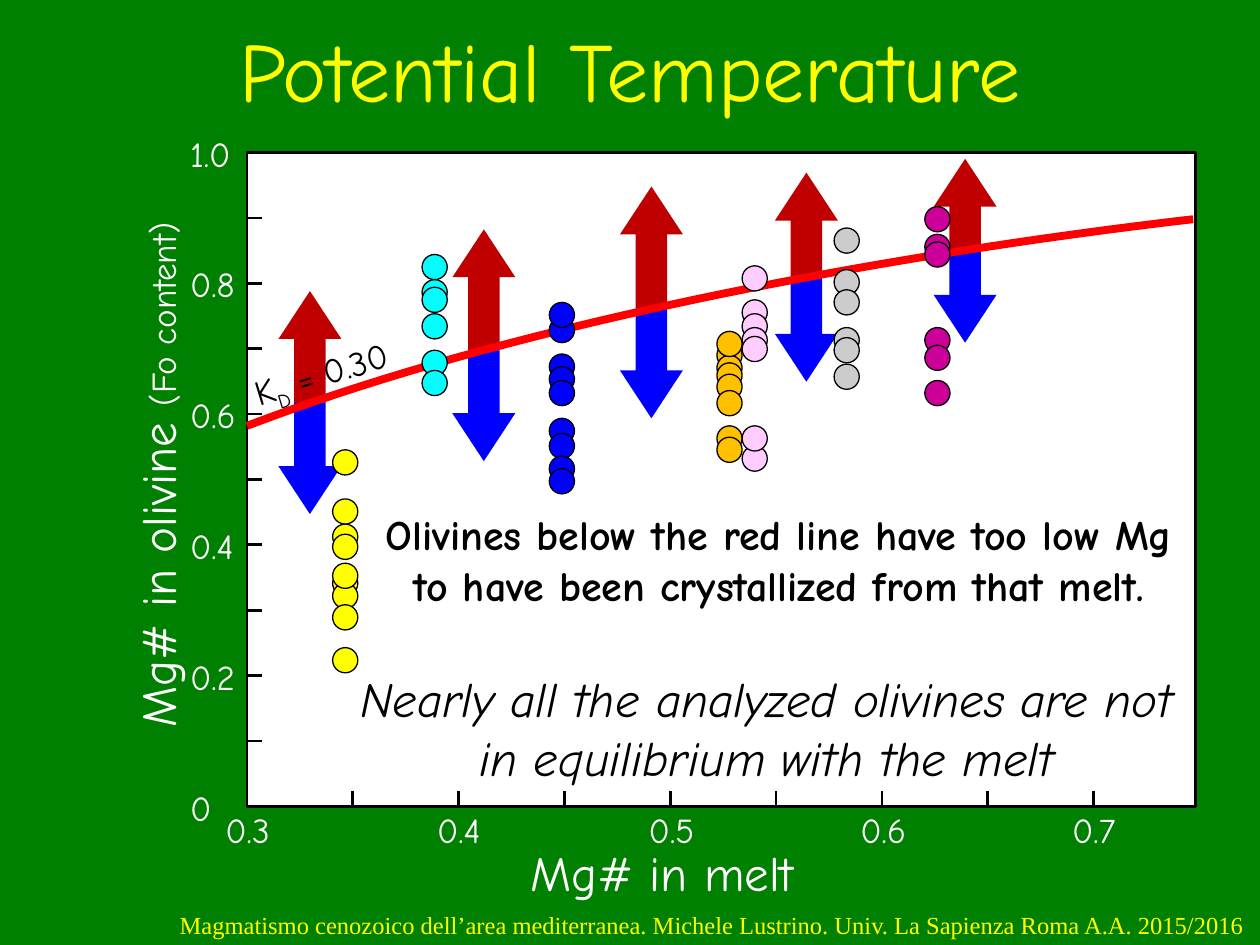
import pptx
import pptx.util
import pptx.dml.color
import pptx.enum.shapes
import pptx.enum.text
import pptx.oxml.ns
import lxml.etree

Inches = pptx.util.Inches
RGBColor = pptx.dml.color.RGBColor
SHAPE = pptx.enum.shapes.MSO_SHAPE
ALIGN = pptx.enum.text.PP_ALIGN
ANCHOR = pptx.enum.text.MSO_ANCHOR

GREEN = RGBColor(0x00, 0x80, 0x00)
WHITE = RGBColor(0xFF, 0xFF, 0xFF)
BLACK = RGBColor(0x00, 0x00, 0x00)
YELLOW = RGBColor(0xFF, 0xFF, 0x00)
RED = RGBColor(0xFF, 0x00, 0x00)
DARK_RED = RGBColor(0xC0, 0x00, 0x00)
BLUE = RGBColor(0x00, 0x00, 0xFF)
CYAN = RGBColor(0x00, 0xFF, 0xFF)
ORANGE = RGBColor(0xFF, 0xC0, 0x00)
PINK = RGBColor(0xFF, 0xCC, 0xFF)
GREY = RGBColor(0xCC, 0xCC, 0xCC)
MAGENTA = RGBColor(0xCC, 0x00, 0x99)

MAIN_FONT = "Comic Neue"
FOOTER_FONT = "Times New Roman"

PLOT = (1.96, 1.21, 7.53, 5.19)
X_MIN, X_SPAN = 0.3, 0.45
TICK = 0.12
DOT = 0.2
ARROW_WIDTH = 0.5
ARROW_HEAD = 0.38

# Offsets in inches from the plot's top left corner
CURVE = [(0, 2.17), (2.31, 1.29), (5.36, 0.78), (7.51, 0.53)]
# left, top, meeting point, bottom
ARROWS = [
    (0.25, 1.10, 1.99, 2.87),
    (1.63, 0.61, 1.57, 2.45),
    (2.96, 0.27, 1.24, 2.11),
    (4.19, 0.16, 0.99, 1.82),
    (5.45, 0.05, 0.78, 1.51),
]
# colour, centre across, centres down
OLIVINES = [
    (BLUE, 2.5, [1.41, 1.7, 1.8, 1.91, 2.21, 2.33, 2.51, 2.61, 1.29]),
    (ORANGE, 3.83, [1.61, 1.71, 1.77, 1.52, 1.86, 1.99, 2.27, 2.36]),
    (CYAN, 1.49, [0.91, 1.11, 1.17, 1.38, 1.67, 1.83]),
    (PINK, 4.03, [1, 1.27, 1.38, 1.49, 1.56, 2.43, 2.27]),
    (GREY, 4.76, [0.7, 1.03, 1.19, 1.49, 1.57, 1.78]),
    (MAGENTA, 5.48, [0.53, 0.75, 0.81, 1.49, 1.63, 1.91]),
    (YELLOW, 0.78, [2.85, 3.05, 3.13, 3.42, 3.52, 3.36, 3.69, 2.46, 4.03]),
]


def write(tf, runs, align=ALIGN.LEFT, wrap=True, anchor=ANCHOR.TOP):
    """Fill a text frame with one paragraph of (text, font values) runs."""
    tf.word_wrap = wrap
    tf.vertical_anchor = anchor
    p = tf.paragraphs[0]
    p.alignment = align
    for text, values in runs:
        r = p.add_run()
        r.text = text
        for name, value in {"name": MAIN_FONT, **values}.items():
            if name == "color":
                r.font.color.rgb = value
            elif name == "baseline":
                r._r.get_or_add_rPr().set("baseline", str(value))
            else:
                setattr(r.font, name, value)


def font(size, color, **more):
    return {"size": pptx.util.Pt(size), "color": color, **more}


def add_text(shapes, box, runs, rotation=0, **layout):
    sp = shapes.add_textbox(*map(Inches, box))
    sp.rotation = rotation
    write(sp.text_frame, runs, **layout)


def add_filled(shapes, kind, box, fill, line_width=None):
    sp = shapes.add_shape(kind, *map(Inches, box))
    sp.shadow.inherit = False
    sp.fill.solid()
    sp.fill.fore_color.rgb = fill
    if line_width is None:
        sp.line.fill.background()
    else:
        sp.line.color.rgb = BLACK
        sp.line.width = pptx.util.Pt(line_width)
    return sp


def add_tick(shapes, x1, y1, x2, y2):
    line = shapes.add_connector(pptx.enum.shapes.MSO_CONNECTOR.STRAIGHT,
                                *map(Inches, (x1, y1, x2, y2)))
    line.line.color.rgb = BLACK
    line.line.width = pptx.util.Pt(1.5)
    lxml.etree.SubElement(line._element.spPr, pptx.oxml.ns.qn("a:effectLst"))


def add_axes(s, box):
    left, top, width, height = box
    bottom = top + height
    shapes = s.shapes.add_group_shape().shapes
    add_filled(shapes, SHAPE.RECTANGLE, box, WHITE, 1.5)
    label = font(20, WHITE)
    for i in range(9):
        x = left + i * 0.05 / X_SPAN * width * 1.004
        if i:
            add_tick(shapes, x, bottom, x, bottom - TICK)
        if i % 2 == 0:
            add_text(shapes, (x - 0.27, bottom - 0.03, 0.62, 0.44),
                     [(f"{X_MIN + i * 0.05:.1f}", label)], wrap=False)
    for i in range(11):
        y = bottom - i * height / 10
        if 0 < i < 10:
            add_tick(shapes, left, y, left + TICK, y)
        if i % 2 == 0:
            add_text(shapes, (left - 0.55, y - 0.21, 0.62, 0.44),
                     [(f"{i / 10:.1f}" if i else "0", label)], wrap=False)
    add_text(shapes, (left - 2.97, top + 2.12, 4.51, 0.57),
             [("Mg# in olivine ", font(28, WHITE)), ("(Fo content)", label)],
             rotation=270, wrap=False)
    add_text(shapes, (left + 2.15, bottom + 0.24, 2.45, 0.57),
             [("Mg# in melt", font(28, WHITE))], wrap=False)


def add_arrows(s, box):
    for x, top, middle, bottom in ARROWS:
        for start, end, color, turn in ((top, middle, DARK_RED, 180),
                                        (middle, bottom, BLUE, 0)):
            sp = add_filled(s.shapes, SHAPE.DOWN_ARROW,
                            (box[0] + x, box[1] + start, ARROW_WIDTH, end - start), color)
            sp.adjustments[1] = ARROW_HEAD / ARROW_WIDTH
            sp.rotation = turn


def add_comments(s, box):
    left, top = box[:2]
    sp = add_filled(s.shapes, SHAPE.RECTANGLE, (left + 0.93, top + 2.78, 6.58, 1.31), WHITE)
    write(sp.text_frame,
          [("Olivines below the red line have too low Mg to have been "
            "crystallized from that melt.", font(24, BLACK, bold=True))],
          align=ALIGN.CENTER)
    add_text(s.shapes, (left - 0.06, top + 1.52, 1.41, 0.44),
             [("K", font(20, BLACK)), ("D", font(20, BLACK, baseline=-25000)),
              (" = 0.30", font(20, BLACK))], rotation=343.1, wrap=False)
    add_text(s.shapes, (left + 0.76, top + 4.05, 6.73, 1.04),
             [("Nearly all the analyzed olivines are not in equilibrium with the melt",
               font(28, BLACK, italic=True))], align=ALIGN.CENTER)


def add_equilibrium_curve(s, box, steps=40):
    """Draw the cubic Bezier curve through the CURVE control points."""
    points = []
    for i in range(steps + 1):
        t = i / steps
        weights = ((1 - t) ** 3, 3 * t * (1 - t) ** 2, 3 * t * t * (1 - t), t ** 3)
        points.append(tuple(
            Inches(box[axis] + sum(w * c[axis] for w, c in zip(weights, CURVE)))
            for axis in (0, 1)))
    builder = s.shapes.build_freeform(*points[0])
    builder.add_line_segments(points[1:], close=False)
    sp = builder.convert_to_shape()
    sp.shadow.inherit = False
    sp.fill.background()
    sp.line.color.rgb = RED
    sp.line.width = pptx.util.Pt(4.5)


def add_olivines(s, box):
    for color, x, depths in OLIVINES:
        shapes = s.shapes.add_group_shape().shapes
        for y in depths:
            add_filled(shapes, SHAPE.OVAL,
                       (box[0] + x - DOT / 2, box[1] + y - DOT / 2, DOT, DOT), color, 0.75)


def add_title(s, box):
    sp = s.shapes.title
    sp.left, sp.top, sp.width, sp.height = map(Inches, box)
    write(sp.text_frame, [("Potential Temperature", font(48, YELLOW))], align=ALIGN.CENTER)
    sp.text_frame.auto_size = pptx.enum.text.MSO_AUTO_SIZE.NONE


def add_footer(s, box):
    add_text(s.shapes, box,
             [("Magmatismo cenozoico dell’area mediterranea. Michele Lustrino. "
               "Univ. La Sapienza Roma A.A. 2015/2016",
               font(14, YELLOW, name=FOOTER_FONT))],
             align=ALIGN.RIGHT, anchor=ANCHOR.MIDDLE)


def main():
    prs = pptx.Presentation()
    prs.slide_width, prs.slide_height = Inches(10), Inches(7.5)
    s = prs.slides.add_slide(prs.slide_layouts[5])
    s.background.fill.solid()
    s.background.fill.fore_color.rgb = GREEN
    add_footer(s, (1.08, 7.17, 8.9, 0.34))
    add_title(s, (0, 0.1, 10, 0.9))
    for add_part in (add_axes, add_arrows, add_comments, add_equilibrium_curve, add_olivines):
        add_part(s, PLOT)
    prs.save("out.pptx")


if __name__ == "__main__":
    main()
